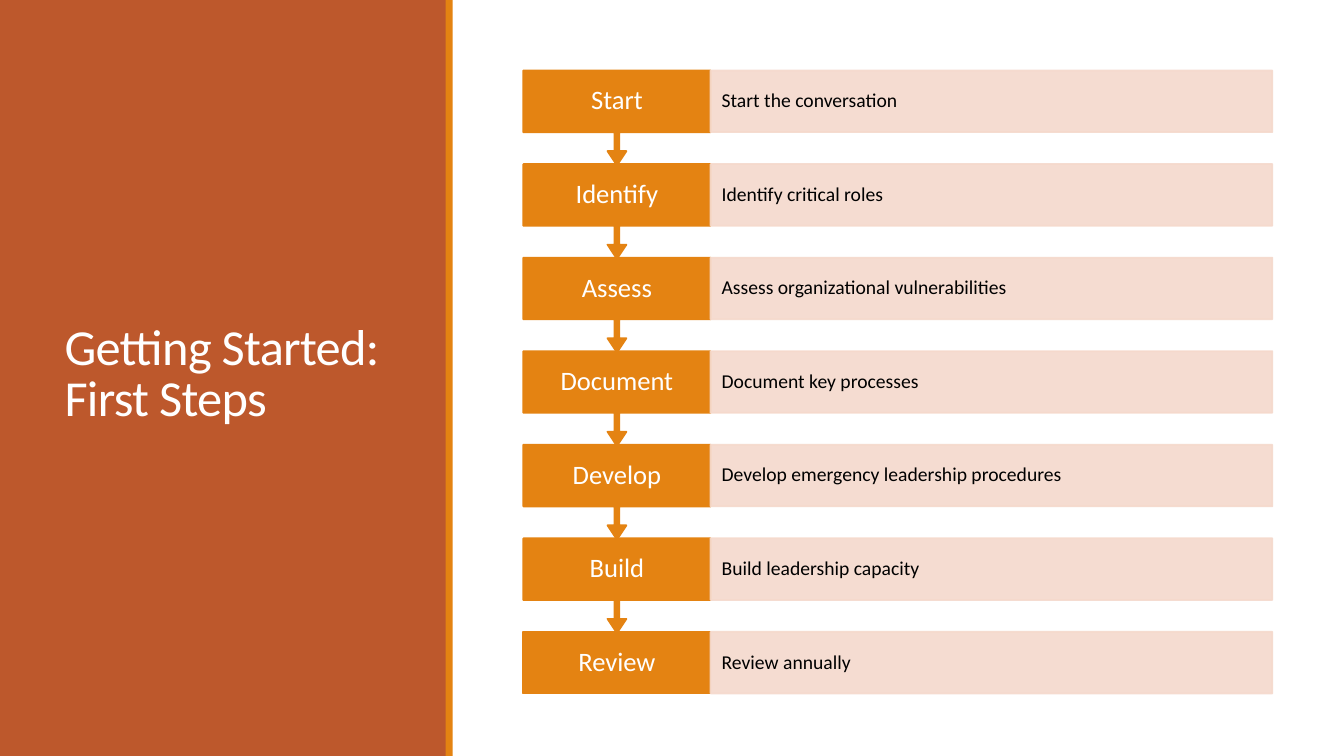
from collections import namedtuple

from lxml.etree import SubElement
from pptx import Presentation
from pptx.dml.color import RGBColor
from pptx.enum.shapes import MSO_SHAPE as Preset
from pptx.enum.text import MSO_ANCHOR as Anchor, MSO_AUTO_SIZE as AutoSize, PP_ALIGN as Align
from pptx.oxml.ns import qn
from pptx.util import Inches, Pt

Box = namedtuple("Box", "left top width height")

WIDTH, HEIGHT = 13.33, 7.5
RUST, ORANGE, BLUSH = "BD582C", "E48312", "F5D9CC"
WHITE, BLACK = "FFFFFF", "000000"
FONT = "Calibri"
LABEL_SHARE = 0.25  # label column, as a share of the step list's width
BAR_SHARE = 0.65  # bar height, as a share of a callout's height
CALLOUT_HEIGHT = 0.94
STEPS = [
    ("Start", "Start the conversation"),
    ("Identify", "Identify critical roles"),
    ("Assess", "Assess organizational vulnerabilities"),
    ("Document", "Document key processes"),
    ("Develop", "Develop emergency leadership procedures"),
    ("Build", "Build leadership capacity"),
    ("Review", "Review annually"),
]


def rgb(value):
    return RGBColor.from_string(value)


def inches(box):
    return [Inches(length) for length in box]


def add_block(page, preset, box, color, outlined=True):
    block = page.shapes.add_shape(preset, *inches(box))
    block.shadow.inherit = False
    block.fill.solid()
    block.fill.fore_color.rgb = rgb(color)
    if outlined:
        block.line.color.rgb = rgb(color)
        block.line.width = Pt(1.25)
    else:
        block.line.fill.background()
    return block


def set_opacity(block, percent):
    """Apply one opacity to both the fill and the outline."""
    for color in block._element.spPr.iter(qn("a:srgbClr")):
        SubElement(color, qn("a:alpha"), val=str(percent * 1000))


def write(shape, text, size, color, align=Align.LEFT, spacing=0.9, inset=0.1):
    frame = shape.text_frame
    frame.text = text
    frame.word_wrap = True
    frame.auto_size = AutoSize.NONE
    frame.vertical_anchor = Anchor.MIDDLE
    frame.margin_left = frame.margin_right = Inches(inset)
    para = frame.paragraphs[0]
    para.alignment = align
    para.line_spacing = spacing
    font = para.runs[0].font
    font.name, font.size, font.color.rgb = FONT, Pt(size), rgb(color)
    return para.runs[0]


def add_title_panel(page, box):
    add_block(page, Preset.RECTANGLE, box, RUST, outlined=False)
    stripe = Box(box.left + box.width - 0.01, box.top, 0.07, box.height)
    add_block(page, Preset.RECTANGLE, stripe, ORANGE, outlined=False)
    title = page.shapes.title
    title.left, title.top, title.width, title.height = inches(
        Box(box.left + 0.54, box.top + 0.57, 3.37, 6.31))
    span = write(title, "Getting Started: First Steps", 36, WHITE, spacing=0.85)
    span._r.get_or_add_rPr().set("spc", "-50")
    # Bring the title in front of the panel
    page.shapes._spTree.append(title._element)


def add_step(page, box, label, detail, is_last):
    label_width = box.width * LABEL_SHARE
    label_box = box._replace(width=label_width)
    if is_last:
        add_block(page, Preset.RECTANGLE, label_box, ORANGE)
    else:
        callout_box = label_box._replace(height=CALLOUT_HEIGHT)
        callout = add_block(page, Preset.UP_ARROW_CALLOUT, callout_box, ORANGE)
        callout.rotation = 180
        for index, value in enumerate((0.05, 0.1, 0.15, BAR_SHARE)):
            callout.adjustments[index] = value
    caption = page.shapes.add_textbox(*inches(label_box))
    write(caption, label, 19, WHITE, Align.CENTER, inset=0.13)

    detail_box = box._replace(left=box.left + label_width, width=box.width - label_width)
    panel = add_block(page, Preset.RECTANGLE, detail_box, BLUSH)
    set_opacity(panel, 90)
    write(panel, detail, 14, BLACK, inset=0.11)


def add_step_list(page, box):
    bar_height = CALLOUT_HEIGHT * BAR_SHARE
    last = len(STEPS) - 1
    pitch = (box.height - bar_height) / last
    # Work upwards so that each arrow tip lies over the bar below it
    for row in range(last, -1, -1):
        bar = box._replace(top=box.top + row * pitch, height=bar_height)
        add_step(page, bar, *STEPS[row], is_last=row == last)


def main():
    deck = Presentation()
    deck.slide_width, deck.slide_height = Inches(WIDTH), Inches(HEIGHT)
    page = deck.slides.add_slide(deck.slide_layouts[5])
    add_title_panel(page, Box(0, 0, 4.43, HEIGHT))
    add_step_list(page, Box(5.19, 0.7, 7.43, 6.18))
    deck.save("out.pptx")


if __name__ == "__main__":
    main()
